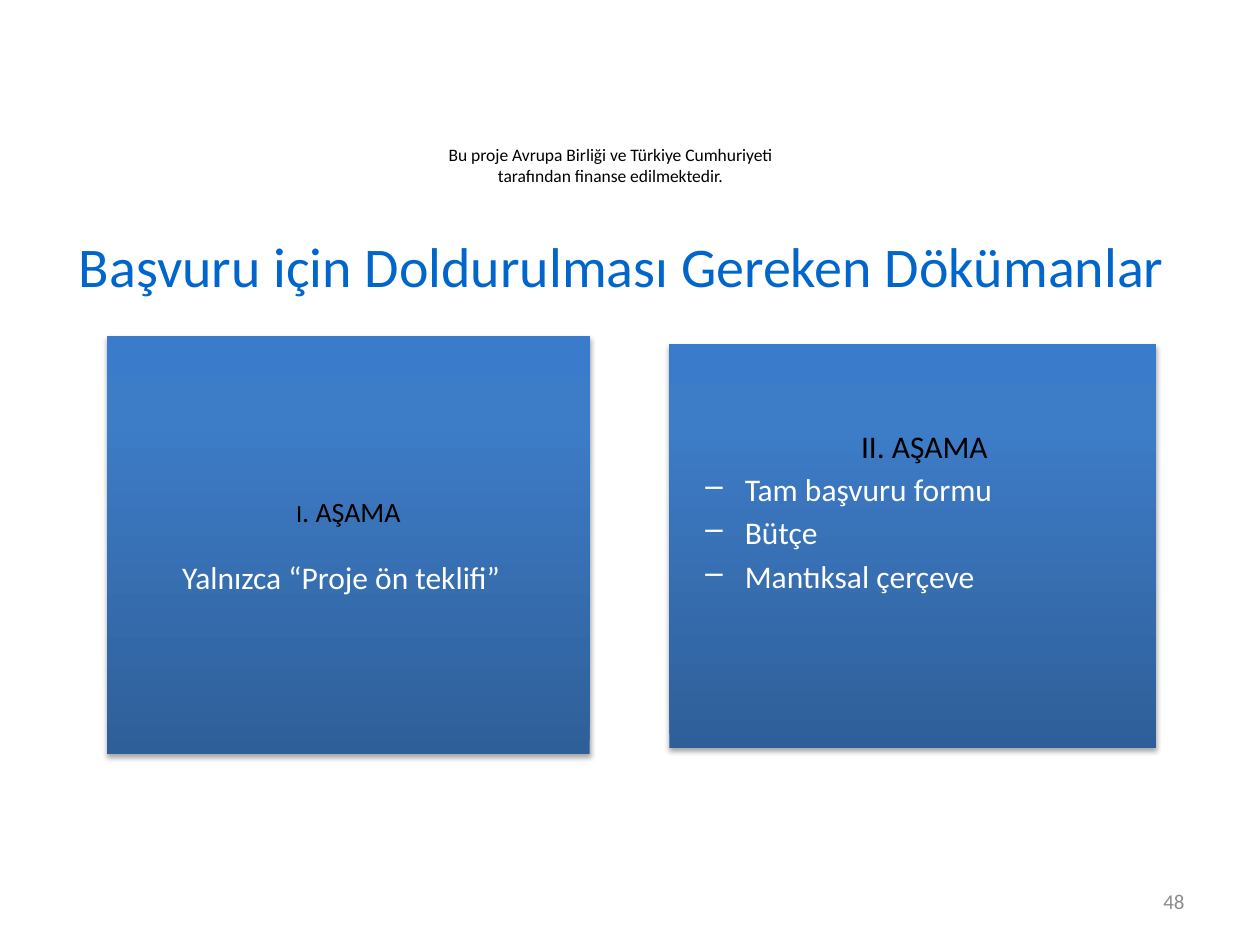
from copy import deepcopy

from pptx import Presentation
from pptx.dml.color import RGBColor
from pptx.enum.shapes import MSO_SHAPE
from pptx.enum.text import MSO_ANCHOR, PP_ALIGN
from pptx.oxml import parse_xml
from pptx.oxml.ns import nsdecls, qn
from pptx.util import Pt

STOPS = [(0, "2F5F99"), (0.8, "3D7CC7"), (1, "3A7CCB")]
SHADOW = (
    f'<a:outerShdw {nsdecls("a")} blurRad="{Pt(3.1)}" dist="{Pt(1.8)}" '
    'dir="5400000" rotWithShape="0"><a:srgbClr val="000000">'
    '<a:alpha val="35000"/></a:srgbClr></a:outerShdw>'
)


def color(code):
    """Turn a hex string into a colour."""
    return RGBColor.from_string(code)


class Deck:
    """Holds the style and the current slide."""

    face = "Calibri"
    black = "000000"
    white = "FFFFFF"
    blue = "0066CC"
    gray = "8C8C8C"

    def __init__(self, wide, high):
        """Start a deck with one blank slide."""
        self.show = Presentation()
        self.show.slide_width, self.show.slide_height = Pt(wide), Pt(high)
        self.slide = self.show.slides.add_slide(self.show.slide_layouts[6])

    def style(self, font, size, code):
        """Set face, size and colour of a font."""
        font.name, font.size = self.face, Pt(size)
        font.color.rgb = color(code)

    def line(self, frame, text, size, code, align=PP_ALIGN.LEFT,
             left=0, hang=0, gap=0, mark=None):
        """Write one paragraph into a text frame."""
        fresh = not frame.paragraphs[0].runs
        para = frame.paragraphs[0] if fresh else frame.add_paragraph()
        para.alignment = align
        if gap:
            para.space_before = Pt(gap)
        props = para._p.get_or_add_pPr()
        props.set("marL", str(Pt(left)))
        props.set("indent", str(Pt(-hang)))
        if mark:
            props.append(parse_xml(f'<a:buChar {nsdecls("a")} char="{mark}"/>'))
        para.add_run().text = text
        self.style(para.font, size, code)
        return para

    def label(self, box, text, size, code, align=PP_ALIGN.CENTER,
              anchor=MSO_ANCHOR.MIDDLE):
        """Add a text box with one paragraph."""
        frame = self.slide.shapes.add_textbox(*map(Pt, box)).text_frame
        frame.word_wrap = True
        frame.vertical_anchor = anchor
        self.line(frame, text, size, code, align)

    def panel(self, box):
        """Add a shaded rectangle and return its text frame."""
        shape = self.slide.shapes.add_shape(MSO_SHAPE.RECTANGLE, *map(Pt, box))
        shape.line.fill.background()
        shape.fill.gradient()
        shape.fill.gradient_angle = 90
        props = shape._element.spPr
        stops = props.find(".//" + qn("a:gsLst"))
        stops.append(deepcopy(stops[-1]))
        for stop, (place, code) in zip(shape.fill.gradient_stops, STOPS):
            stop.position = place
            stop.color.rgb = color(code)
        shape.shadow.inherit = False
        props.find(qn("a:effectLst")).append(parse_xml(SHADOW))
        frame = shape.text_frame
        frame.word_wrap = True
        frame.vertical_anchor = MSO_ANCHOR.MIDDLE
        return frame

    def save(self):
        """Write the deck to disk."""
        self.show.save("out.pptx")


def main():
    """Build the slide on application documents."""
    deck = Deck(720, 540)
    deck.label((244, 78.5, 209.5, 22.5),
               "Bu proje Avrupa Birliği ve Türkiye Cumhuriyeti "
               "tarafından finanse edilmektedir.",
               10, deck.black, anchor=MSO_ANCHOR.TOP)
    deck.label((18, 112.5, 675, 78.5),
               "Başvuru için Doldurulması Gereken Dökümanlar", 32, deck.blue)

    second = deck.panel((382.5, 196.5, 278, 231))
    second.margin_bottom = Pt(44)
    deck.line(second, "II. AŞAMA", 18, deck.black, PP_ALIGN.CENTER, left=13.5)
    for text in ("Tam başvuru formu", "Bütçe", "Mantıksal çerçeve"):
        deck.line(second, text, 18, deck.white,
                  left=36, hang=22.5, gap=3.2, mark="–")

    first = deck.panel((61, 192, 276, 239))
    head = deck.line(first, "I", 16, deck.black, PP_ALIGN.CENTER)
    deck.style(head.runs[0].font, 14, deck.black)
    tail = head.add_run()
    tail.text = ". AŞAMA"
    deck.style(tail.font, 16, deck.black)
    deck.line(first, "Yalnızca “Proje ön teklifi”", 18, deck.white,
              left=36, gap=17)

    deck.label((516, 500.5, 168, 29), "48", 12, deck.gray, PP_ALIGN.RIGHT)
    deck.save()


if __name__ == "__main__":
    main()
